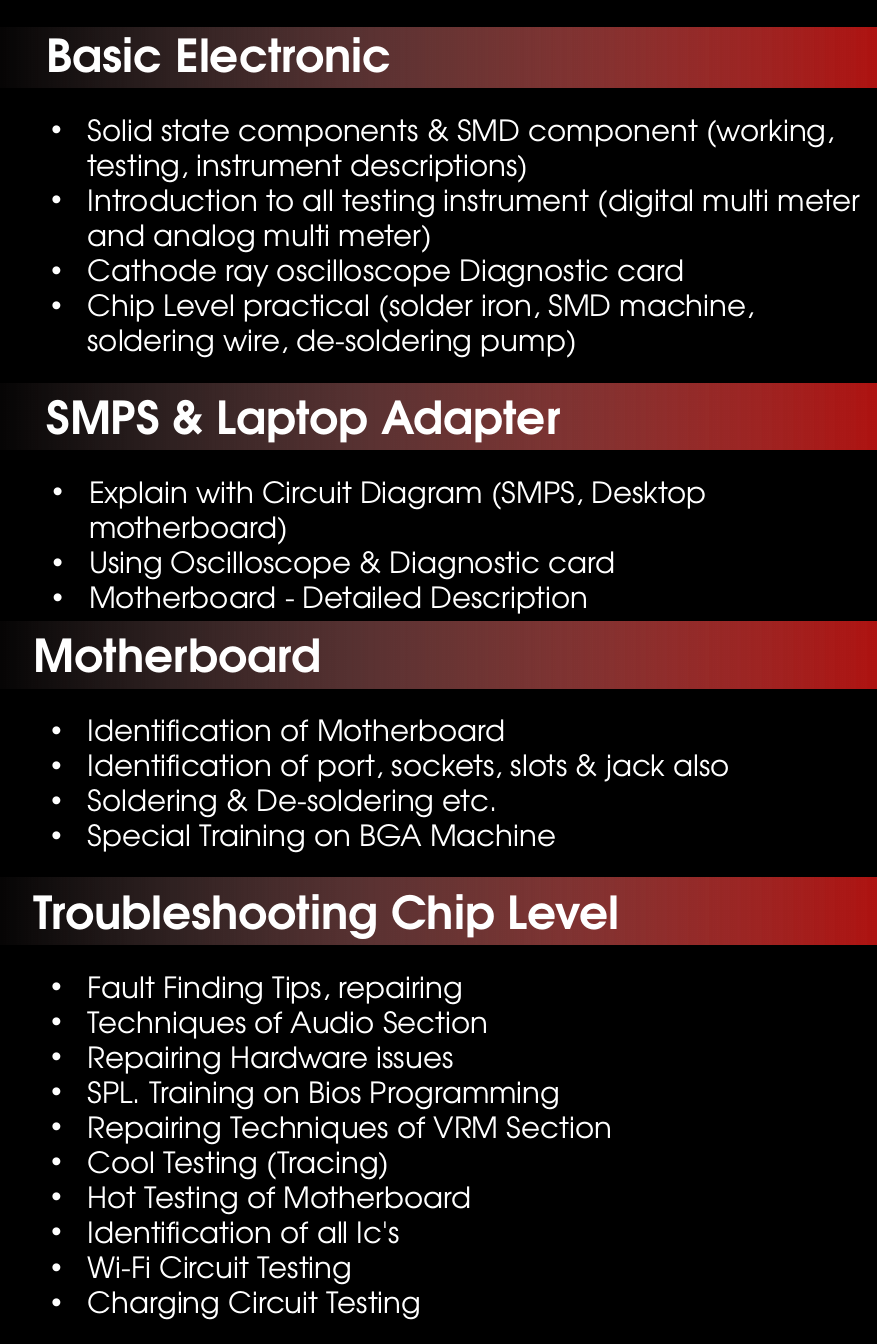
from dataclasses import dataclass

import lxml.etree
import pptx
import pptx.dml.color
import pptx.enum.shapes
import pptx.enum.text
import pptx.oxml.ns
import pptx.presentation
import pptx.shapes.autoshape
import pptx.shapes.base
import pptx.slide
import pptx.text.text
import pptx.util
from pptx.util import Cm

FONT = "TeX Gyre Adventor"
WHITE, BLACK = "FFFFFF", "000000"
BAR_START, BAR_END = "E8BEBE", "B01513"
COMPARISON_LAYOUT = 4  # a title and four body placeholders
HEADING_HEIGHT = 1.45
LIST_OFFSET = 1.85  # from heading top to list top
LINE_HEIGHT = 0.76
BULLET_INDENT = 0.79


@dataclass(frozen=True)
class Section:
    heading: str
    top: float
    bar_height: float
    heading_indent: float
    list_left: float
    line_count: int
    items: tuple[str, ...]


SECTIONS = (
    Section("Basic Electronic", 0.46, 1.3, 0.28, 0.86, 7, (
        "Solid state components & SMD component (working, testing, instrument descriptions)",
        "Introduction to all testing instrument (digital multi meter and analog multi meter)",
        "Cathode ray oscilloscope Diagnostic card",
        "Chip Level practical (solder iron, SMD machine, soldering wire, de-soldering pump)",
    )),
    Section("SMPS & Laptop Adapter", 8.33, 1.45, 0.28, 0.89, 4, (
        "Explain with Circuit Diagram (SMPS, Desktop motherboard)",
        "Using Oscilloscope & Diagnostic card",
        "Motherboard - Detailed Description",
    )),
    Section("Motherboard", 13.51, 1.45, 0, 0.86, 4, (
        "Identification of Motherboard",
        "Identification of port, sockets, slots & jack also",
        "Soldering & De-soldering etc.",
        "Special Training on BGA Machine",
    )),
    Section("Troubleshooting Chip Level", 19.08, 1.45, 0, 0.86, 10, (
        "Fault Finding Tips, repairing",
        "Techniques of Audio Section",
        "Repairing Hardware issues",
        "SPL. Training on Bios Programming",
        "Repairing Techniques of VRM Section",
        "Cool Testing (Tracing)",
        "Hot Testing of Motherboard",
        "Identification of all Ic's",
        "Wi-Fi Circuit Testing",
        "Charging Circuit Testing",
    )),
)


def color(hex_value: str) -> pptx.dml.color.RGBColor:
    return pptx.dml.color.RGBColor.from_string(hex_value)


def place(shape: pptx.shapes.base.BaseShape,
          left: float, top: float, width: float, height: float) -> None:
    shape.left, shape.top = Cm(left), Cm(top)
    shape.width, shape.height = Cm(width), Cm(height)


def format_frame(frame: pptx.text.text.TextFrame) -> None:
    frame.word_wrap = True
    frame.auto_size = pptx.enum.text.MSO_AUTO_SIZE.SHAPE_TO_FIT_TEXT
    frame.vertical_anchor = pptx.enum.text.MSO_ANCHOR.TOP


def format_paragraph(paragraph: pptx.text.text._Paragraph, size: int, bold: bool) -> None:
    paragraph.alignment = pptx.enum.text.PP_ALIGN.LEFT
    paragraph.space_before = pptx.util.Pt(0)
    paragraph.font.name = FONT
    paragraph.font.size = pptx.util.Pt(size)
    paragraph.font.bold = bold
    paragraph.font.color.rgb = color(WHITE)


def add_bullet(paragraph: pptx.text.text._Paragraph) -> None:
    qn = pptx.oxml.ns.qn
    properties = paragraph._p.get_or_add_pPr()
    properties.set("marL", str(Cm(BULLET_INDENT)))
    properties.set("indent", str(-Cm(BULLET_INDENT)))
    lxml.etree.SubElement(properties, qn("a:buFont")).set("typeface", "Arial")
    lxml.etree.SubElement(properties, qn("a:buChar")).set("char", "•")


def add_bar(slide: pptx.slide.Slide, section: Section) -> None:
    bar = slide.shapes.add_shape(pptx.enum.shapes.MSO_SHAPE.RECTANGLE, 0, 0, 0, 0)
    top = section.top + HEADING_HEIGHT - section.bar_height
    place(bar, -0.58, top, 19.61, section.bar_height)
    bar.shadow.inherit = False
    bar.line.fill.background()
    bar.fill.gradient()
    bar.fill.gradient_angle = 0
    for stop, position, hex_value in zip(bar.fill.gradient_stops, (0, 1), (BAR_START, BAR_END)):
        stop.position = position
        stop.color.rgb = color(hex_value)
    # The bar fades in from fully transparent and lies behind the text
    qn = pptx.oxml.ns.qn
    first_color = bar.element.find(".//" + qn("a:srgbClr"))
    lxml.etree.SubElement(first_color, qn("a:alpha")).set("val", "0")
    slide.shapes.title.element.addprevious(bar.element)


def fill_heading(shape: pptx.shapes.autoshape.Shape, section: Section) -> None:
    place(shape, 0.48, section.top, 18.06, HEADING_HEIGHT)
    frame = shape.text_frame
    format_frame(frame)
    frame.margin_left = Cm(0.25 + section.heading_indent)
    frame.text = section.heading
    format_paragraph(frame.paragraphs[0], 28, True)


def fill_list(shape: pptx.shapes.autoshape.Shape, section: Section) -> None:
    height = section.line_count * LINE_HEIGHT + 0.25
    place(shape, section.list_left, section.top + LIST_OFFSET, 18.16, height)
    frame = shape.text_frame
    format_frame(frame)
    frame.text = "\n".join(section.items)
    for paragraph in frame.paragraphs:
        add_bullet(paragraph)
        format_paragraph(paragraph, 18, False)


def main() -> None:
    presentation = pptx.Presentation()
    presentation.slide_width, presentation.slide_height = Cm(19.05), Cm(29.21)
    slide = presentation.slides.add_slide(presentation.slide_layouts[COMPARISON_LAYOUT])
    slide.background.fill.solid()
    slide.background.fill.fore_color.rgb = color(BLACK)

    # One bar, heading and list per section; the first heading is the title
    title, *bodies = slide.placeholders
    for section, body in zip(SECTIONS, bodies):
        add_bar(slide, section)
        is_title = section is SECTIONS[0]
        heading = title if is_title else slide.shapes.add_textbox(0, 0, 0, 0)
        fill_heading(heading, section)
        fill_list(body, section)

    presentation.save("out.pptx")


if __name__ == "__main__":
    main()
